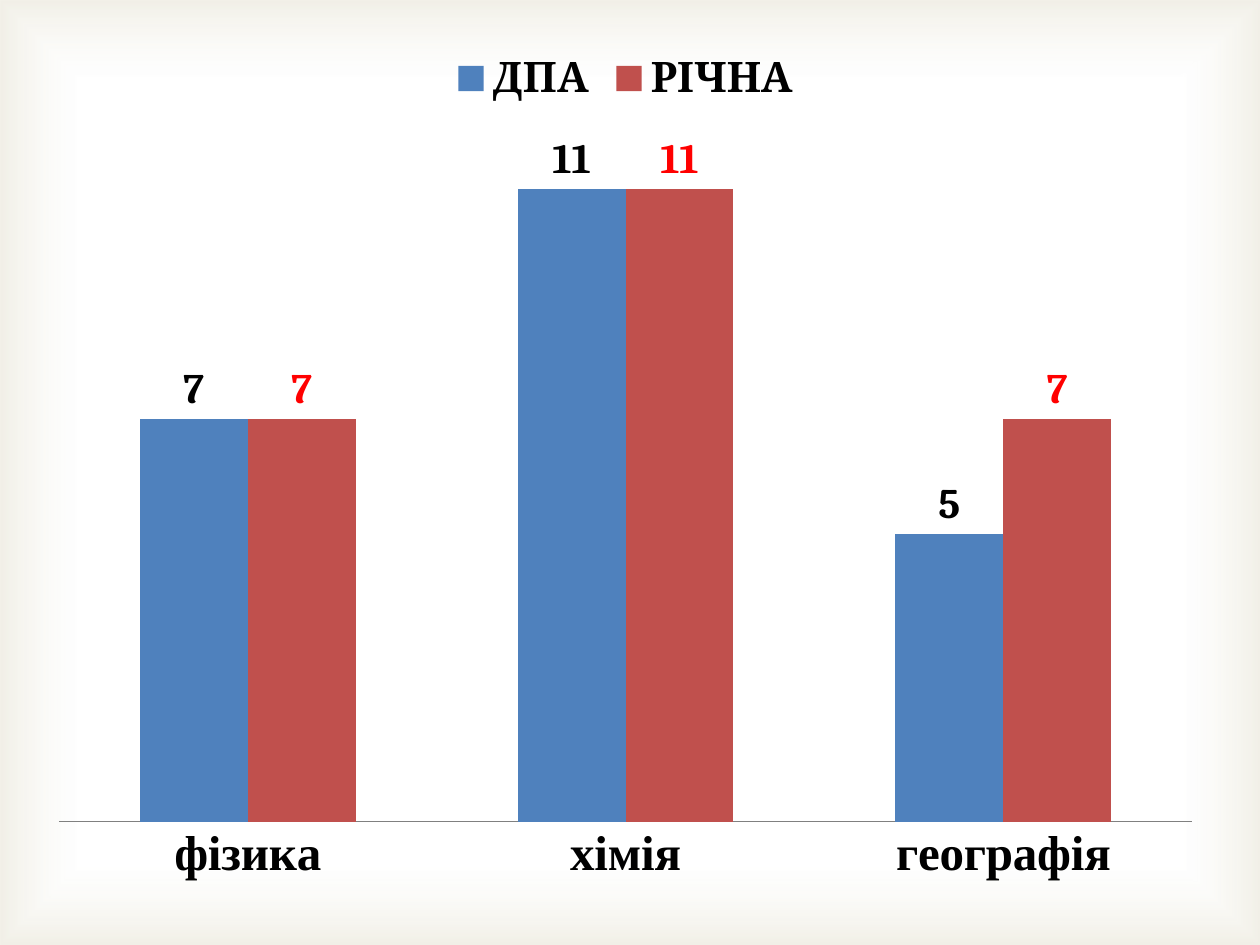
from lxml import etree
from pptx import Presentation
from pptx import util as u
from pptx.chart.data import CategoryChartData
from pptx.dml.color import RGBColor
from pptx.enum import chart as c, shapes
from pptx.oxml import parse_xml
from pptx.oxml.ns import nsdecls, qn

BLACK = RGBColor(0x00, 0x00, 0x00)
RED = RGBColor(0xFF, 0x00, 0x00)
BLUE_BAR = RGBColor(0x4F, 0x81, 0xBD)
RED_BAR = RGBColor(0xC0, 0x50, 0x4D)
AXIS_GRAY = RGBColor(0x80, 0x80, 0x80)
WHITE = RGBColor(0xFF, 0xFF, 0xFF)
BEIGE = RGBColor(0xC4, 0xBD, 0x97)


def format_text(font, size=10, color=BLACK, bold=False, name="Cambria"):
    font.size = u.Pt(size)
    font.color.rgb = color
    font.bold = bold
    font.name = name


presentation = Presentation()
presentation.slide_width = u.Inches(10)
presentation.slide_height = u.Inches(7.5)
slide = presentation.slides.add_slide(presentation.slide_layouts[6])
slide.background.fill.solid()
slide.background.fill.fore_color.rgb = WHITE

# Soft beige frame: translucent gradient running from the centre to the edges
frame = slide.shapes.add_shape(
    shapes.MSO_SHAPE.RECTANGLE, 0, 0, presentation.slide_width, presentation.slide_height
)
frame.shadow.inherit = False
frame.line.fill.background()
stops = "".join(
    f'<a:gs pos="{position * 1000}"><a:srgbClr val="{color}">'
    f'<a:alpha val="{alpha * 1000}"/></a:srgbClr></a:gs>'
    for position, color, alpha in [(83, WHITE, 11), (100, BEIGE, 23)]
)
gradient = parse_xml(
    f'<a:gradFill {nsdecls("a")}><a:gsLst>{stops}</a:gsLst><a:path path="rect">'
    '<a:fillToRect l="50000" t="50000" r="50000" b="50000"/></a:path></a:gradFill>'
)
frame.element.spPr.find(qn("a:prstGeom")).addnext(gradient)

# Chart data
series_styles = [
    ("ДПА", (7, 11, 5), BLUE_BAR, BLACK),
    ("РІЧНА", (7, 11, 7), RED_BAR, RED),
]
chart_data = CategoryChartData(number_format="General")
chart_data.categories = ["фізика", "хімія", "географія"]
for name, values, _, _ in series_styles:
    chart_data.add_series(name, values)

chart = slide.shapes.add_chart(
    c.XL_CHART_TYPE.COLUMN_CLUSTERED,
    u.Inches(0.28), u.Inches(0.29), u.Inches(9.37), u.Inches(6.85),
    chart_data,
).chart
chart.has_title = False
format_text(chart.font)

# Legend
chart.has_legend = True
chart.legend.position = c.XL_LEGEND_POSITION.TOP
chart.legend.include_in_layout = False
format_text(chart.legend.font, size=24, bold=True)

# Axes
category_axis = chart.category_axis
category_axis.major_tick_mark = c.XL_TICK_MARK.NONE
category_axis.format.line.color.rgb = AXIS_GRAY
format_text(category_axis.tick_labels.font, size=28, bold=True, name="Times New Roman")
value_axis = chart.value_axis
value_axis.visible = False
value_axis.has_major_gridlines = False
value_axis.minimum_scale = 0
value_axis.maximum_scale = 12

# Columns and their value labels
plot = chart.plots[0]
plot.gap_width = 150
plot.overlap = 0
plot.vary_by_categories = False
for series, (_, _, bar_color, label_color) in zip(plot.series, series_styles):
    series.format.fill.solid()
    series.format.fill.fore_color.rgb = bar_color
    labels = series.data_labels
    labels.show_value = True
    labels.position = c.XL_LABEL_POSITION.OUTSIDE_END
    format_text(labels.font, size=24, color=label_color, bold=True)

# Plot area as fractions of the chart
plot_area = plot._element.getparent()
for old_layout in plot_area.findall(qn("c:layout")):
    plot_area.remove(old_layout)
layout = etree.Element(qn("c:layout"))
manual = etree.SubElement(layout, qn("c:manualLayout"))
for tag, value in [
    ("layoutTarget", "inner"), ("xMode", "edge"), ("yMode", "edge"),
    ("x", 0.02), ("y", 0.11), ("w", 0.96), ("h", 0.8),
]:
    etree.SubElement(manual, qn(f"c:{tag}")).set("val", str(value))
plot_area.insert(0, layout)

presentation.save("out.pptx")
